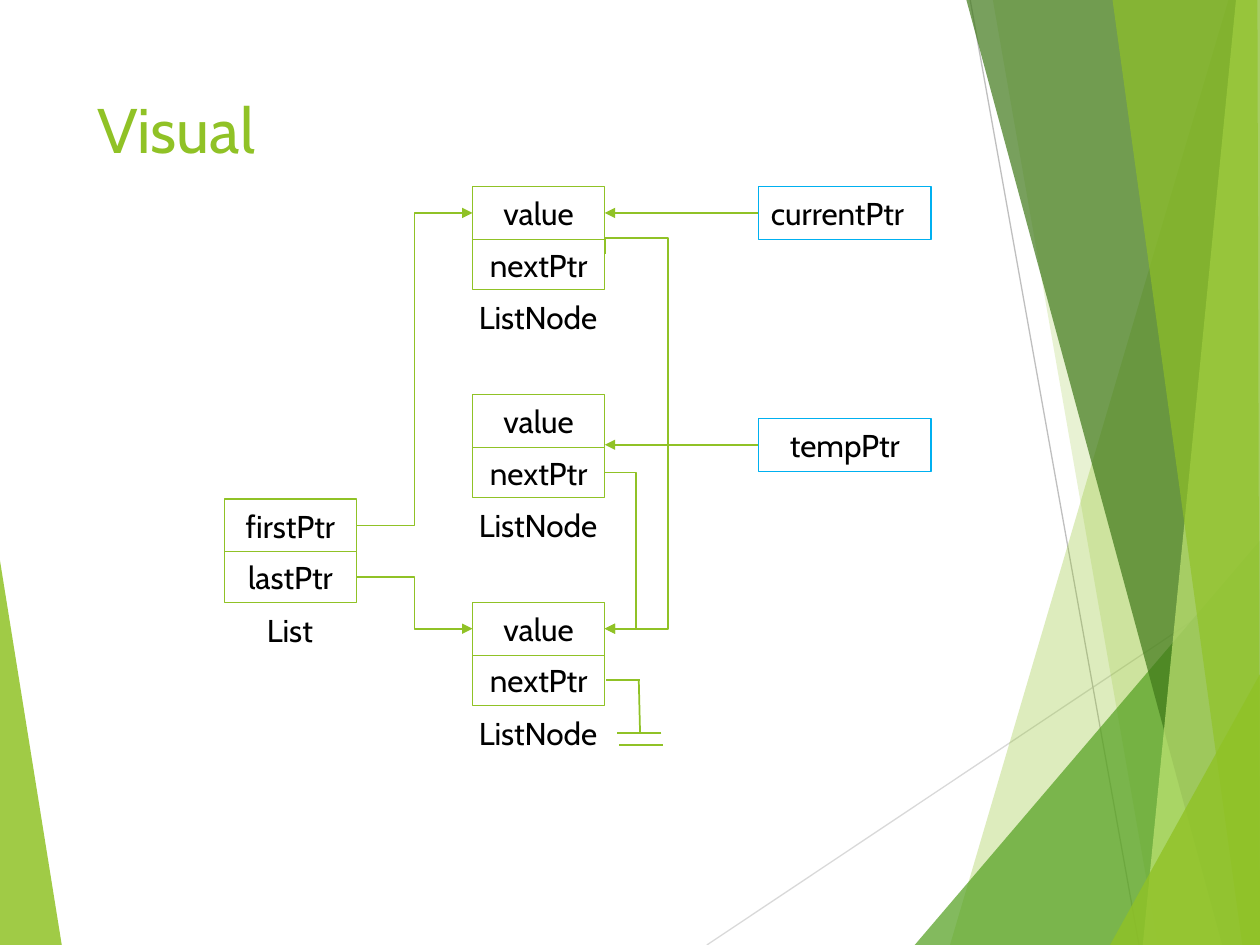
from lxml import etree
from pptx import Presentation
from pptx.dml.color import RGBColor
from pptx.enum.shapes import MSO_CONNECTOR, MSO_SHAPE
from pptx.enum.text import MSO_ANCHOR, PP_ALIGN
from pptx.oxml.ns import qn
from pptx.util import Inches, Pt

RECT = MSO_SHAPE.RECTANGLE
LINE, ELBOW = MSO_CONNECTOR.STRAIGHT, MSO_CONNECTOR.ELBOW
LEFT, CENTER = PP_ALIGN.LEFT, PP_ALIGN.CENTER
TOP, MIDDLE = MSO_ANCHOR.TOP, MSO_ANCHOR.MIDDLE

FONT = "Cabin"
COLORS = {"lime": "90C226", "green": "54A021", "dark": "3F7819",
          "pale": "C0E474", "blue": "00B0F0", "text": "000000",
          "gray": "BFBFBF", "mist": "D9D9D9"}

WIDE, HIGH = 10, 7.5
HEAD, FOOT = 0.42, 0.4          # heights of the two cells of a record
CELL, SIDE = 1.05, 1.37         # widths of a record and a pointer box
LIST_X, NODE_X, PTR_X = 1.78, 3.75, 6.02
TOP_Y, PITCH = 1.48, 1.65       # first node and the step to the next
LIST_Y, TEMP_Y = 3.96, 3.32

# Facets from back to front: colour, opacity in percent, corners
FACETS = [
    ("lime", 30, [(9.75, 0), (7.54, HIGH), (WIDE, HIGH), (WIDE, 0)]),
    ("lime", 20, [(7.88, 0), (9.19, HIGH), (WIDE, HIGH), (WIDE, 0)]),
    ("green", 72, [(7.26, HIGH), (WIDE, 4.29), (WIDE, HIGH)]),
    ("dark", 70, [(7.67, 0), (9.7, HIGH), (WIDE, HIGH), (WIDE, 0)]),
    ("pale", 70, [(9.81, 0), (9.07, HIGH), (WIDE, HIGH), (WIDE, 0)]),
    ("lime", 65, [(8.83, 0), (9.86, HIGH), (WIDE, HIGH), (9.98, 0)]),
    ("lime", 80, [(8.81, HIGH), (WIDE, 5.35), (WIDE, HIGH)]),
]


def color(name):
    return RGBColor.from_string(COLORS[name])


def stroke(item, name, width, arrow=False):
    item.line.color.rgb = color(name)
    item.line.width = Pt(width)
    if arrow:
        ln = item._element.spPr.find(qn("a:ln"))
        etree.SubElement(ln, qn("a:tailEnd"), type="triangle")


def write(frame, text, size, tint, align, anchor):
    frame.word_wrap = True
    frame.vertical_anchor = anchor
    frame.text = text
    para = frame.paragraphs[0]
    para.alignment = align
    para.font.name, para.font.size = FONT, Pt(size)
    para.font.color.rgb = color(tint)


def trace(shapes, points, close):
    spots = [(Inches(x), Inches(y)) for x, y in points]
    pen = shapes.build_freeform(*spots[0], scale=1.0)
    pen.add_line_segments(spots[1:], close=close)
    shape = pen.convert_to_shape()
    shape.shadow.inherit = False
    return shape


def facet(shapes, tint, alpha, points):
    shape = trace(shapes, points, True)
    shape.fill.solid()
    shape.fill.fore_color.rgb = color(tint)
    shape.line.fill.background()
    clr = shape._element.spPr.find(qn("a:solidFill"))[0]
    etree.SubElement(clr, qn("a:alpha"), val=str(alpha * 1000))


def route(shapes, points):
    """Draw an open path of right angles that ends in an arrowhead."""
    shape = trace(shapes, points, False)
    shape.fill.background()
    stroke(shape, "lime", 1, True)


def link(shapes, start, end, kind=LINE, tint="lime", width=1, arrow=False):
    """Join two ends, each a point (x, y) or a pair (shape, side)."""
    free = [(0, 0) if hasattr(e[0], "shape_id") else e for e in (start, end)]
    line = shapes.add_connector(kind, *(Inches(v) for e in free for v in e))
    if hasattr(start[0], "shape_id"):
        line.begin_connect(*start)
    if hasattr(end[0], "shape_id"):
        line.end_connect(*end)
    stroke(line, tint, width, arrow)
    etree.SubElement(line._element.spPr, qn("a:effectLst"))


def box(shapes, x, y, w, h, text, tint="lime", align=CENTER):
    shape = shapes.add_shape(RECT, Inches(x), Inches(y), Inches(w), Inches(h))
    shape.shadow.inherit = False
    shape.fill.background()
    stroke(shape, tint, 0.75)
    write(shape.text_frame, text, 18, "text", align, MIDDLE)
    return shape


def record(shapes, x, y, head, foot, name):
    """Stack two cells with the type name below; return the cells."""
    cells = (box(shapes, x, y, CELL, HEAD, head),
             box(shapes, x, y + HEAD, CELL, FOOT, foot))
    label = shapes.add_textbox(Inches(x - 0.09), Inches(y + HEAD * 2),
                               Inches(CELL + 0.17), Inches(FOOT))
    write(label.text_frame, name, 18, "text", CENTER, TOP)
    return cells


def ground(shapes, x, y):
    """Mark a null pointer that leaves a cell at x, y."""
    stem, low = x + 0.28, y + 0.42
    link(shapes, (x + 0.01, y), (stem, y))
    link(shapes, (stem - 0.01, y), (stem, low))
    for step in (0, 1):
        left, bar = x + 0.1 + step * 0.01, low + step * 0.09
        link(shapes, (left + 0.35, bar), (left, bar))


def backdrop(shapes):
    facet(shapes, "lime", 85, [(0, 4.45), (0.49, HIGH), (0, HIGH)])
    link(shapes, (5.61, HIGH), (WIDE, 4.57), tint="mist", width=0.75)
    link(shapes, (7.7, 0), (9.04, HIGH), tint="gray", width=0.75)
    for tint, alpha, points in FACETS:
        facet(shapes, tint, alpha, points)


def heading(shapes, x, y, w, h, text):
    title = shapes.title
    title.left, title.top = Inches(x), Inches(y)
    title.width, title.height = Inches(w), Inches(h)
    write(title.text_frame, text, 36, "lime", LEFT, TOP)
    shapes._spTree.append(title._element)  # in front of the backdrop


def diagram(shapes):
    tops = [TOP_Y + PITCH * row for row in range(3)]
    first, last = record(shapes, LIST_X, LIST_Y, "firstPtr", "lastPtr", "List")
    nodes = [record(shapes, NODE_X, y, "value", "nextPtr", "ListNode")
             for y in tops]
    link(shapes, (first, 3), (nodes[0][0], 1), ELBOW, arrow=True)
    link(shapes, (last, 3), (nodes[2][0], 1), ELBOW, arrow=True)

    edge = NODE_X + CELL
    mids = [y + HEAD + FOOT / 2 for y in tops]
    goal = tops[2] + HEAD / 2
    route(shapes, [(edge, mids[1]), (edge + 0.25, mids[1]),
                   (edge + 0.25, goal), (edge, goal)])
    rise = tops[0] + HEAD - 0.01
    route(shapes, [(edge, mids[0] - 0.08), (edge, rise), (edge + 0.5, rise),
                   (edge + 0.5, goal), (edge, goal)])
    ground(shapes, edge, mids[2])

    current = box(shapes, PTR_X, TOP_Y, SIDE, HEAD, "currentPtr", "blue", LEFT)
    link(shapes, (current, 1), (nodes[0][0], 3), arrow=True)
    temp = box(shapes, PTR_X, TEMP_Y, SIDE, HEAD, "tempPtr", "blue")
    link(shapes, (temp, 1), (edge, TEMP_Y + HEAD / 2), arrow=True)


def main():
    deck = Presentation()
    deck.slide_width, deck.slide_height = Inches(WIDE), Inches(HIGH)
    shapes = deck.slides.add_slide(deck.slide_layouts[5]).shapes
    backdrop(shapes)
    heading(shapes, 0.67, 0.67, 6.94, 1.44, "Visual")
    diagram(shapes)
    deck.save("out.pptx")


if __name__ == "__main__":
    main()
